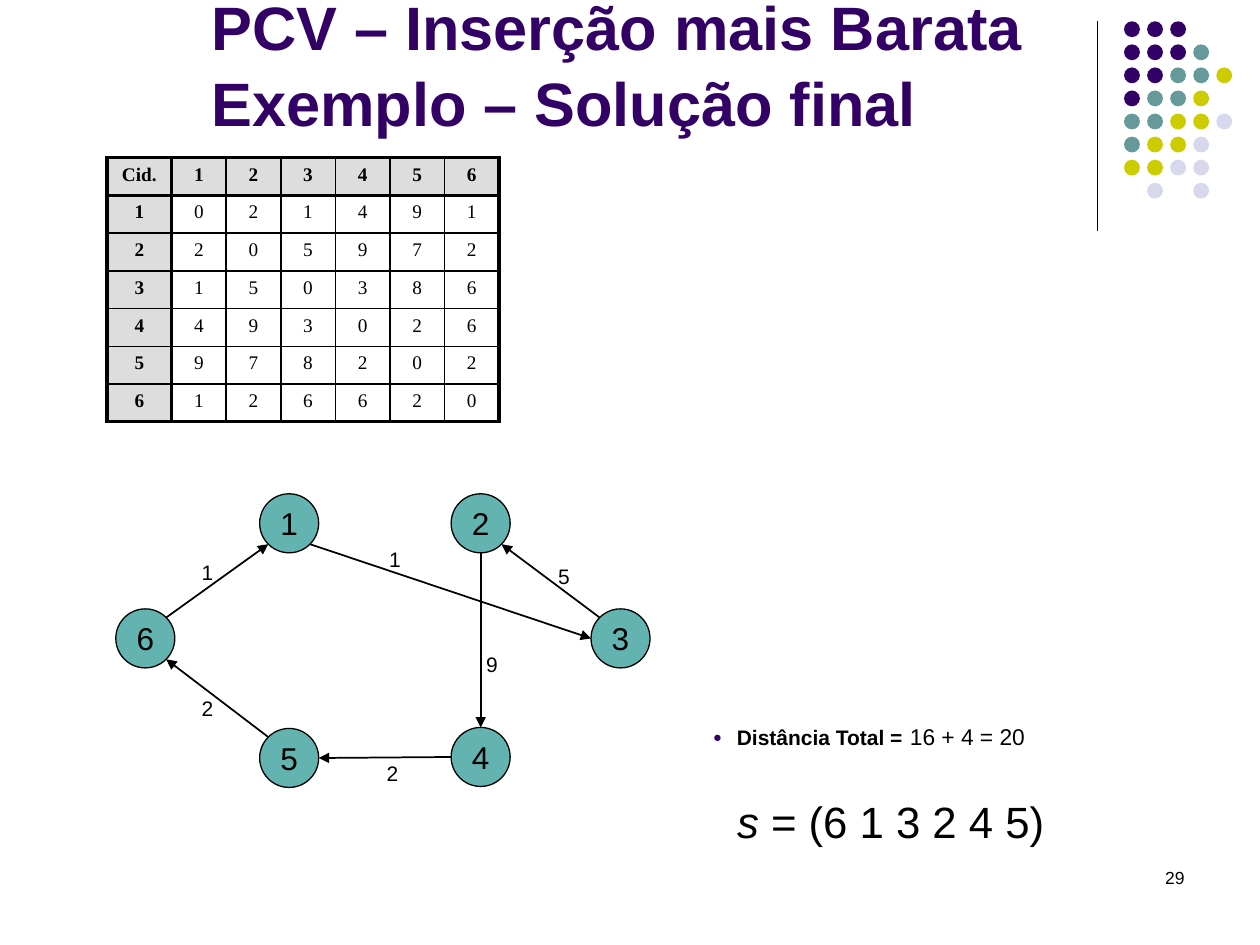
"""Build the slide with the final cheapest-insertion tour, its distance table and its graph."""
from math import hypot

from lxml.etree import SubElement
from pptx import Presentation
from pptx.dml.color import RGBColor
from pptx.enum.shapes import MSO_CONNECTOR, MSO_SHAPE
from pptx.enum.text import MSO_ANCHOR, MSO_AUTO_SIZE, PP_ALIGN
from pptx.oxml import parse_xml
from pptx.oxml.ns import nsdecls, qn
from pptx.util import Cm, Pt

COLORS = {"purple": "330066", "teal": "669999", "olive": "CCCC00", "lilac": "D8D8EC",
          "node": "63B3B1", "header": "DDDDDD", "black": "000000"}


def write(text_frame, text, size, align=PP_ALIGN.CENTER, color="black", bold=False, font="Arial"):
    text_frame.text = text
    paragraph = text_frame.paragraphs[0]
    paragraph.alignment = align
    paragraph.font.name = font
    paragraph.font.size = Pt(size)
    paragraph.font.bold = bold
    paragraph.font.color.rgb = RGBColor.from_string(COLORS[color])
    return paragraph


def add_line(slide, start, end, width, arrow=False):
    connector = slide.shapes.add_connector(
        MSO_CONNECTOR.STRAIGHT, *(Cm(length) for length in (*start, *end)))
    connector.line.color.rgb = RGBColor.from_string(COLORS["black"])
    connector.line.width = Pt(width)
    if arrow:
        SubElement(connector.line._get_or_add_ln(), qn("a:tailEnd"), type="triangle")
    SubElement(connector._element.spPr, qn("a:effectLst"))


presentation = Presentation()
presentation.slide_width, presentation.slide_height = Cm(25.4), Cm(19.05)
slide = presentation.slides.add_slide(presentation.slide_layouts[1])

add_line(slide, (22.12, 0.43), (22.12, 4.65), 0.75)
dot_colors = {"P": "purple", "T": "teal", "Y": "olive", "L": "lilac"}
dot_rows = ["PPP", "PPPT", "PPTTY", "PTTY", "TTYYL", "TYYL", "YYLL", " L L"]
for row, codes in enumerate(dot_rows):
    for column, code in enumerate(codes):
        if code in dot_colors:
            dot = slide.shapes.add_shape(
                MSO_SHAPE.OVAL, Cm(22.66 + 0.465 * column), Cm(0.43 + 0.465 * row), Cm(0.32), Cm(0.32))
            dot.shadow.inherit = False
            dot.fill.solid()
            dot.fill.fore_color.rgb = RGBColor.from_string(COLORS[dot_colors[code]])
            dot.line.fill.background()

title, body = slide.placeholders
title.left, title.top, title.width, title.height = Cm(4.01), Cm(1.14), Cm(17.98), Cm(1.78)
paragraph = write(title.text_frame, "PCV – Inserção mais Barata\vExemplo – Solução final",
                  35, PP_ALIGN.LEFT, "purple", True)
paragraph.line_spacing = Pt(43)
title.text_frame.auto_size = MSO_AUTO_SIZE.NONE
title.text_frame.vertical_anchor = MSO_ANCHOR.BOTTOM

body.left, body.top, body.width, body.height = Cm(14.12), Cm(14.48), Cm(5.66), Cm(1.14)
paragraph = write(body.text_frame, "Distância Total =", 12, PP_ALIGN.LEFT, bold=True)
body.text_frame.auto_size = MSO_AUTO_SIZE.NONE
properties = paragraph._p.get_or_add_pPr()
properties.set("marL", str(Cm(0.48)))
properties.set("indent", str(Cm(-0.48)))
SubElement(SubElement(properties, qn("a:buClr")), qn("a:srgbClr"), val=COLORS["purple"])
SubElement(properties, qn("a:buSzPct"), val="70000")
SubElement(properties, qn("a:buFont"), typeface="Arial")
SubElement(properties, qn("a:buChar"), char="●")
properties.append(properties.find(qn("a:defRPr")))

distances = [
    [0, 2, 1, 4, 9, 1],
    [2, 0, 5, 9, 7, 2],
    [1, 5, 0, 3, 8, 6],
    [4, 9, 3, 0, 2, 6],
    [9, 7, 8, 2, 0, 2],
    [1, 2, 6, 6, 2, 0],
]
cities = range(1, 7)
table_rows = [["Cid.", *cities]] + [[city, *values] for city, values in zip(cities, distances)]
table = slide.shapes.add_table(7, 7, Cm(2.16), Cm(3.18), Cm(7.9), Cm(5.32)).table
for index in range(7):
    table.columns[index].width = Cm(1.1 if index else 1.3)
    table.rows[index].height = Cm(0.76)
for row, values in enumerate(table_rows):
    for column, value in enumerate(values):
        cell = table.cell(row, column)
        is_header = row == 0 or column == 0
        write(cell.text_frame, str(value), 11, bold=is_header, font="Times New Roman")
        if is_header:
            cell.fill.solid()
            cell.fill.fore_color.rgb = RGBColor.from_string(COLORS["header"])
        else:
            cell.fill.background()
        thick_sides = {"L": column < 2, "R": column in (0, 6), "T": row < 2, "B": row in (0, 6)}
        for position, (side, thick) in enumerate(thick_sides.items()):
            cell._tc.get_or_add_tcPr().insert(position, parse_xml(
                f'<a:ln{side} {nsdecls("a")} w="{Pt(2.25 if thick else 1)}"><a:solidFill>'
                f'<a:srgbClr val="{COLORS["black"]}"/></a:solidFill></a:ln{side}>'))

diameter = 1.19
centers = {1: (5.83, 10.55), 2: (9.69, 10.55), 3: (12.51, 12.87),
           4: (9.69, 15.26), 5: (5.83, 15.28), 6: (2.93, 12.87)}
for city, (x, y) in centers.items():
    node = slide.shapes.add_shape(
        MSO_SHAPE.OVAL, Cm(x - diameter / 2), Cm(y - diameter / 2), Cm(diameter), Cm(diameter))
    node.shadow.inherit = False
    node.fill.solid()
    node.fill.fore_color.rgb = RGBColor.from_string(COLORS["node"])
    node.line.color.rgb = RGBColor.from_string(COLORS["black"])
    node.line.width = Pt(0.75)
    write(node.text_frame, str(city), 18)
    node.text_frame.word_wrap = False
    node.text_frame.vertical_anchor = MSO_ANCHOR.MIDDLE

tour = [
    (6, (1, -1), 1, (-1, 1), (3.81, 11.15)),
    (1, (1, 1), 3, (-1, 0), (7.59, 10.9)),
    (3, (-1, -1), 2, (1, 1), (11, 11.23)),
    (2, (0, 1), 4, (0, -1), (9.55, 13)),
    (4, (-1, 0), 5, (1, 0), (7.54, 15.21)),
    (5, (-1, -1), 6, (1, 1), (3.81, 13.89)),
]
text_boxes = [("16 + 4 = 20", 13, PP_ALIGN.CENTER, (18.08, 14.45, 2.84, 0.81)),
              ("29", 10, PP_ALIGN.RIGHT, (18.21, 17.35, 5.92, 1.27))]
for origin, exit_side, target, entry_side, label_position in tour:
    start, end = (
        [center + diameter / 2 * step / hypot(*side) for center, step in zip(centers[city], side)]
        for city, side in ((origin, exit_side), (target, entry_side)))
    add_line(slide, start, end, 1, arrow=True)
    weight = distances[origin - 1][target - 1]
    text_boxes.append((str(weight), 12, PP_ALIGN.CENTER, (*label_position, 0.74, 0.76)))

for text, size, align, box in text_boxes:
    text_box = slide.shapes.add_textbox(*(Cm(length) for length in box))
    write(text_box.text_frame, text, size, align)
    text_box.text_frame.word_wrap = align == PP_ALIGN.RIGHT

solution = slide.shapes.add_textbox(Cm(13.61), Cm(15.9), Cm(8.69), Cm(1.32))
solution.text_frame.word_wrap = True
paragraph = write(solution.text_frame, "s", 25)
paragraph.runs[0].font.italic = True
paragraph.add_run().text = " = (6 1 3 2 4 5)"

presentation.save("out.pptx")
